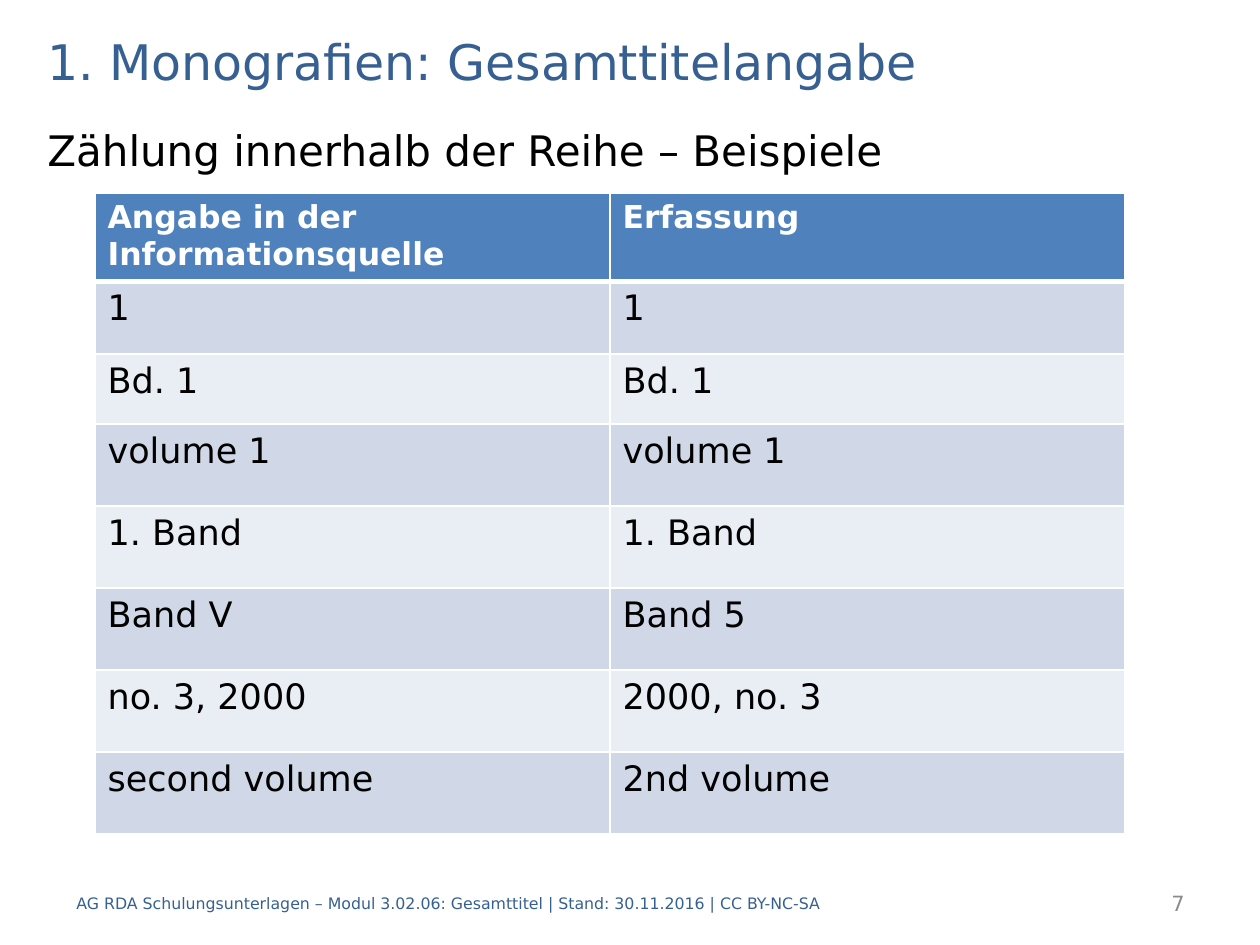
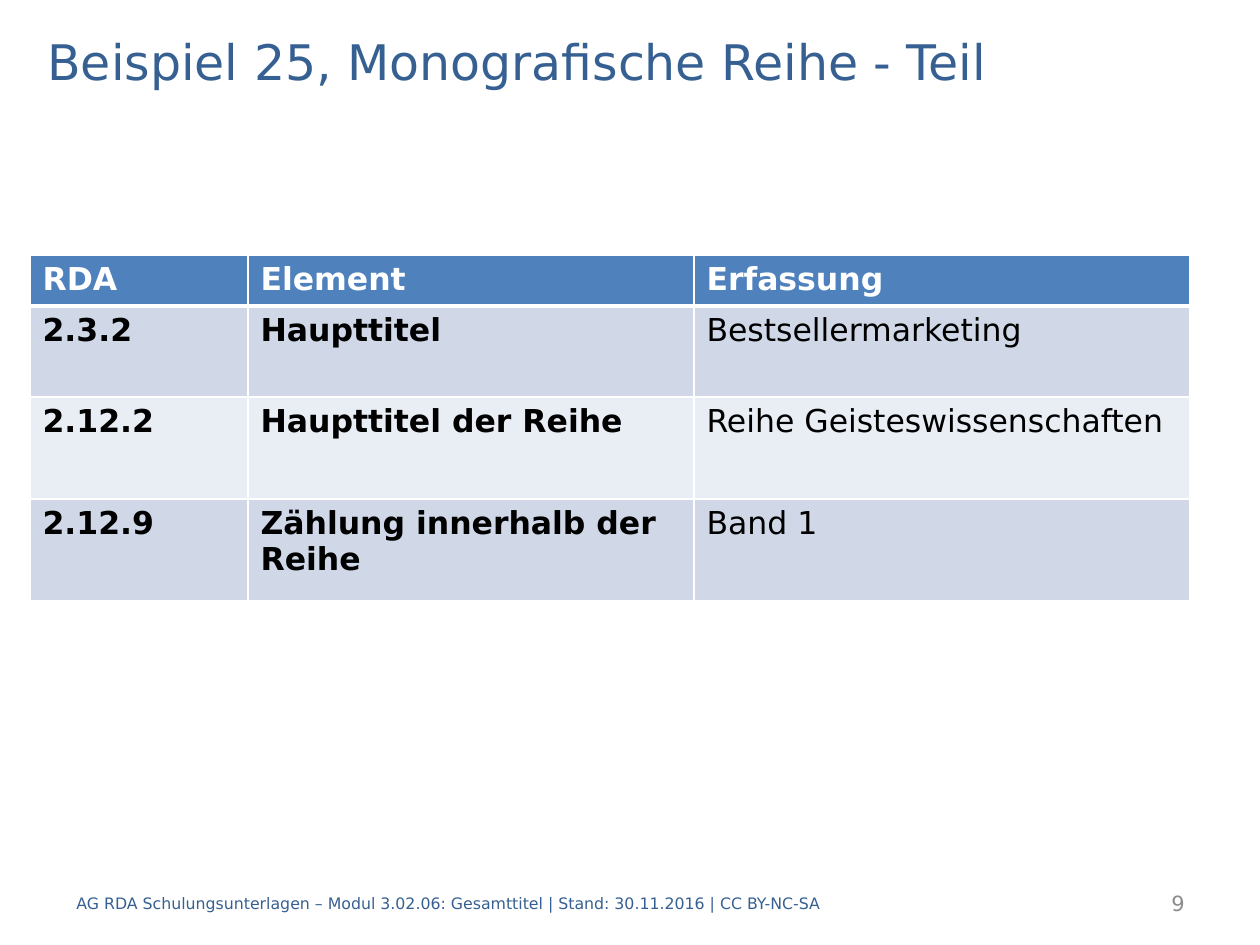
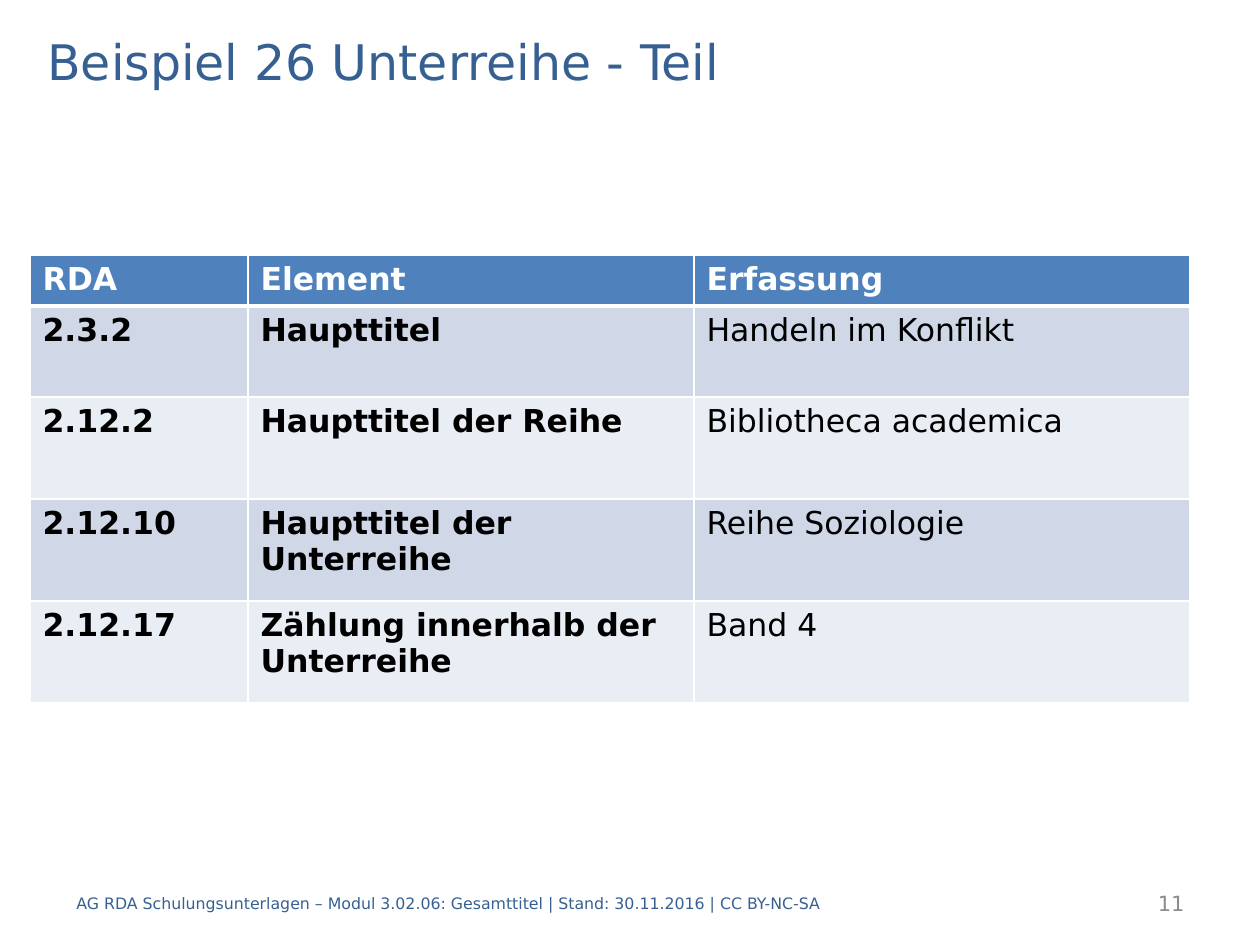
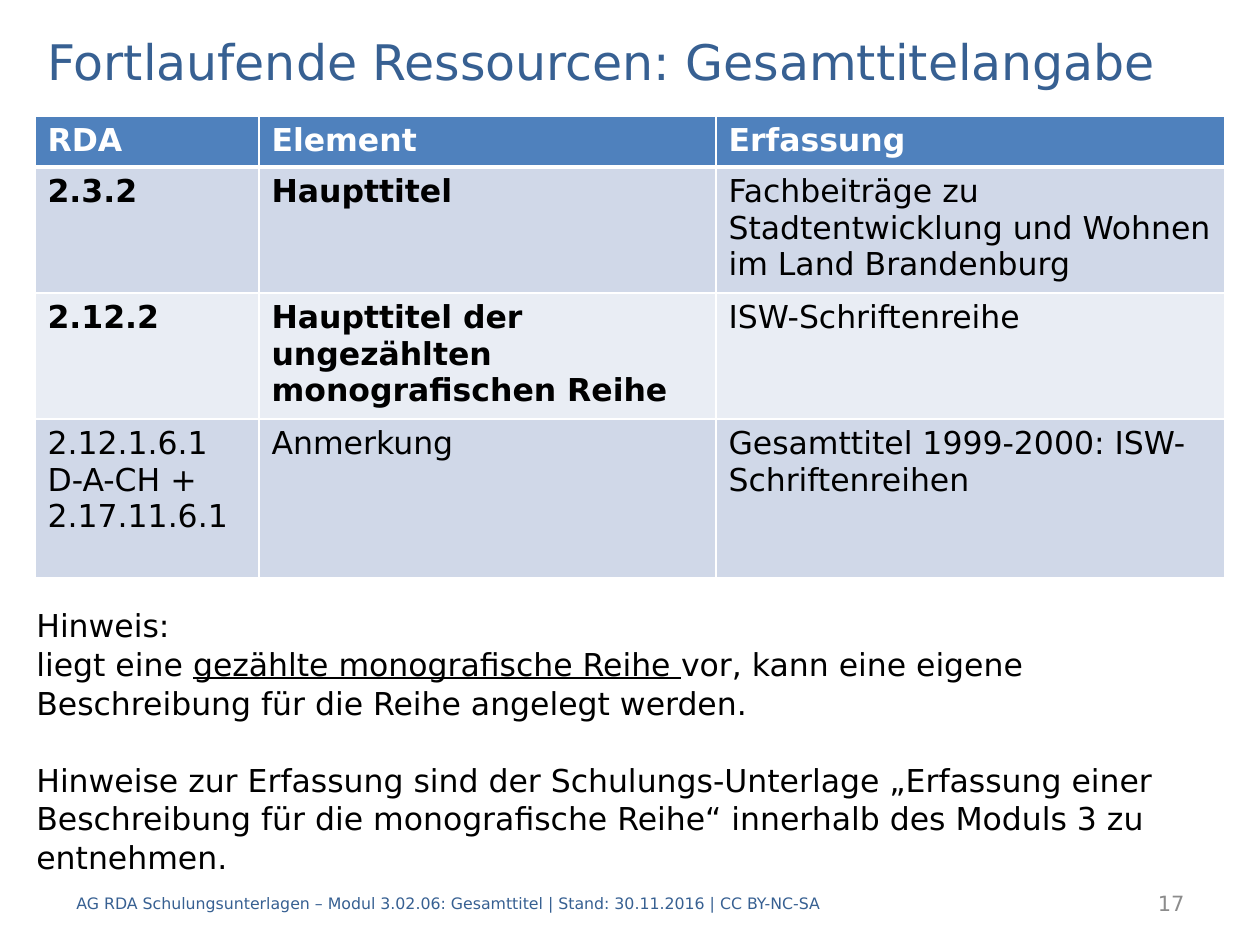
from lxml import etree
from pptx import Presentation
from pptx import util as u
from pptx.dml.color import RGBColor
from pptx.enum import text
from pptx.oxml.ns import qn

# Shared look
PX = 914400 / 126
FONT = "DejaVu Sans"
BLUE, BLACK, WHITE, GREY = "376092", "000000", "FFFFFF", "8C8C8C"
HEADER_FILL, BANDS = "4F81BD", ("D0D8E8", "E9EDF4")
TITLE_BOX = (35, 25, 1191, 71)
SUBTITLE_BOX = (35, 118, 1191, 60)
NOTE_BOX = (24, 599, 1171, 280)
FOOTER_BOX = (64, 878, 843, 50)
NUMBER_BOX = (997, 878, 200, 50)
FOOTER = ("AG RDA Schulungsunterlagen – Modul 3.02.06: Gesamttitel | "
          "Stand: 30.11.2016 | CC BY-NC-SA")

# Content: core rows have a bold element number and name
RDA_HEADER = ("RDA", "Element", "Erfassung")
EXAMPLE_TABLE = {"place": (30, 255), "columns": (218, 446, 496), "header": RDA_HEADER}
SLIDES = [
    {
        "number": 7,
        "title": "1. Monografien: Gesamttitelangabe",
        "subtitle": "Zählung innerhalb der Reihe – Beispiele",
        "table": {
            "place": (95, 193), "columns": (515, 515), "size": 20,
            "heights": (85, 73, 70, 82, 82, 82, 82, 82),
            "header": ("Angabe in der Informationsquelle", "Erfassung"),
            "other": [
                ("1", "1"),
                ("Bd. 1", "Bd. 1"),
                ("volume 1", "volume 1"),
                ("1. Band", "1. Band"),
                ("Band V", "Band 5"),
                ("no. 3, 2000", "2000, no. 3"),
                ("second volume", "2nd volume"),
            ],
        },
    },
    {
        "number": 9,
        "title": "Beispiel 25, Monografische Reihe - Teil",
        "table": {
            **EXAMPLE_TABLE, "heights": (51, 91, 102, 102),
            "core": [
                ("2.3.2", "Haupttitel", "Bestsellermarketing"),
                ("2.12.2", "Haupttitel der Reihe", "Reihe Geisteswissenschaften"),
                ("2.12.9", "Zählung innerhalb der Reihe", "Band 1"),
            ],
        },
    },
    {
        "number": 11,
        "title": "Beispiel 26 Unterreihe - Teil",
        "table": {
            **EXAMPLE_TABLE, "heights": (51, 91, 102, 102, 102),
            "core": [
                ("2.3.2", "Haupttitel", "Handeln im Konflikt"),
                ("2.12.2", "Haupttitel der Reihe", "Bibliotheca academica"),
                ("2.12.10", "Haupttitel der Unterreihe", "Reihe Soziologie"),
                ("2.12.17", "Zählung innerhalb der Unterreihe", "Band 4"),
            ],
        },
    },
    {
        "number": 17,
        "title": "Fortlaufende Ressourcen: Gesamttitelangabe",
        "table": {
            "place": (35, 116), "columns": (224, 457, 509), "header": RDA_HEADER,
            "heights": (51, 122, 122, 159),
            "core": [
                ("2.3.2", "Haupttitel",
                 "Fachbeiträge zu Stadtentwicklung und Wohnen im Land Brandenburg"),
                ("2.12.2", "Haupttitel der ungezählten monografischen Reihe",
                 "ISW-Schriftenreihe"),
            ],
            "other": [
                ("2.12.1.6.1 D-A-CH + 2.17.11.6.1", "Anmerkung",
                 "Gesamttitel 1999-2000: ISW-Schriftenreihen"),
            ],
        },
        # Each paragraph: space before in points, then (text, underlined) runs
        "note": [
            (0, [("Hinweis:", False)]),
            (0, [("liegt eine ", False), ("gezählte monografische Reihe ", True),
                 ("vor, kann eine eigene Beschreibung für die Reihe angelegt werden.", False)]),
            (21.5, [("Hinweise zur Erfassung sind der Schulungs-Unterlage „Erfassung einer "
                     "Beschreibung für die monografische Reihe“ innerhalb des Moduls 3 zu "
                     "entnehmen.", False)]),
        ],
    },
]


def px(length):
    return u.Emu(round(length * PX))


def color(value):
    return RGBColor.from_string(value)


def set_all(target, **values):
    for name, value in values.items():
        setattr(target, name, value)


def add_run(paragraph, words, size, ink, **font_values):
    run = paragraph.add_run()
    run.text = words
    set_all(run.font, name=FONT, size=u.Pt(size), **font_values)
    run.font.color.rgb = color(ink)


def add_box(slide, box, anchor=text.MSO_ANCHOR.TOP):
    frame = slide.shapes.add_textbox(*map(px, box)).text_frame
    set_all(frame, word_wrap=True, vertical_anchor=anchor)
    return frame


def add_line(slide, box, words, size, ink, anchor=text.MSO_ANCHOR.MIDDLE,
             align=text.PP_ALIGN.LEFT):
    paragraph = add_box(slide, box, anchor).paragraphs[0]
    paragraph.alignment = align
    add_run(paragraph, words, size, ink)


def add_note(slide, paragraphs):
    frame = add_box(slide, NOTE_BOX)
    for index, (space, runs) in enumerate(paragraphs):
        paragraph = frame.add_paragraph() if index else frame.paragraphs[0]
        set_all(paragraph, space_before=u.Pt(space), line_spacing=1.03)
        for words, underlined in runs:
            add_run(paragraph, words, 18, BLACK, underline=underlined)


def set_borders(cell, **widths):
    properties = cell._tc.get_or_add_tcPr()
    for position, side in enumerate("LRTB"):
        line = etree.Element(qn("a:ln" + side), w=str(u.Pt(widths.get(side, 1))))
        fill = etree.SubElement(line, qn("a:solidFill"))
        etree.SubElement(fill, qn("a:srgbClr"), val=WHITE)
        properties.insert(position, line)


def add_table(slide, place, columns, heights, header, core=(), other=(), size=18):
    rows = [header, *core, *other]
    table = slide.shapes.add_table(
        len(rows), len(columns),
        *map(px, (*place, sum(columns), sum(heights)))).table
    for column, width in zip(table.columns, columns):
        column.width = px(width)
    for row, height in zip(table.rows, heights):
        row.height = px(height)
    for r, row in enumerate(rows):
        is_header = r == 0
        for c, words in enumerate(row):
            cell = table.cell(r, c)
            cell.fill.solid()
            cell.fill.fore_color.rgb = color(HEADER_FILL if is_header else BANDS[(r - 1) % 2])
            set_borders(cell, T=3 if r == 1 else 1, B=3 if is_header else 1)
            add_run(cell.text_frame.paragraphs[0], words,
                    18 if is_header else size, WHITE if is_header else BLACK,
                    bold=is_header or (r <= len(core) and c < 2))


def main():
    presentation = Presentation()
    set_all(presentation, slide_width=px(1260), slide_height=px(945))
    for content in SLIDES:
        slide = presentation.slides.add_slide(presentation.slide_layouts[6])
        add_line(slide, TITLE_BOX, content["title"], 28, BLUE)
        if "subtitle" in content:
            add_line(slide, SUBTITLE_BOX, content["subtitle"], 24, BLACK, text.MSO_ANCHOR.TOP)
        add_table(slide, **content["table"])
        if "note" in content:
            add_note(slide, content["note"])
        add_line(slide, FOOTER_BOX, FOOTER, 9, BLUE)
        add_line(slide, NUMBER_BOX, str(content["number"]), 12, GREY,
                 align=text.PP_ALIGN.RIGHT)
    presentation.save("out.pptx")


if __name__ == "__main__":
    main()
